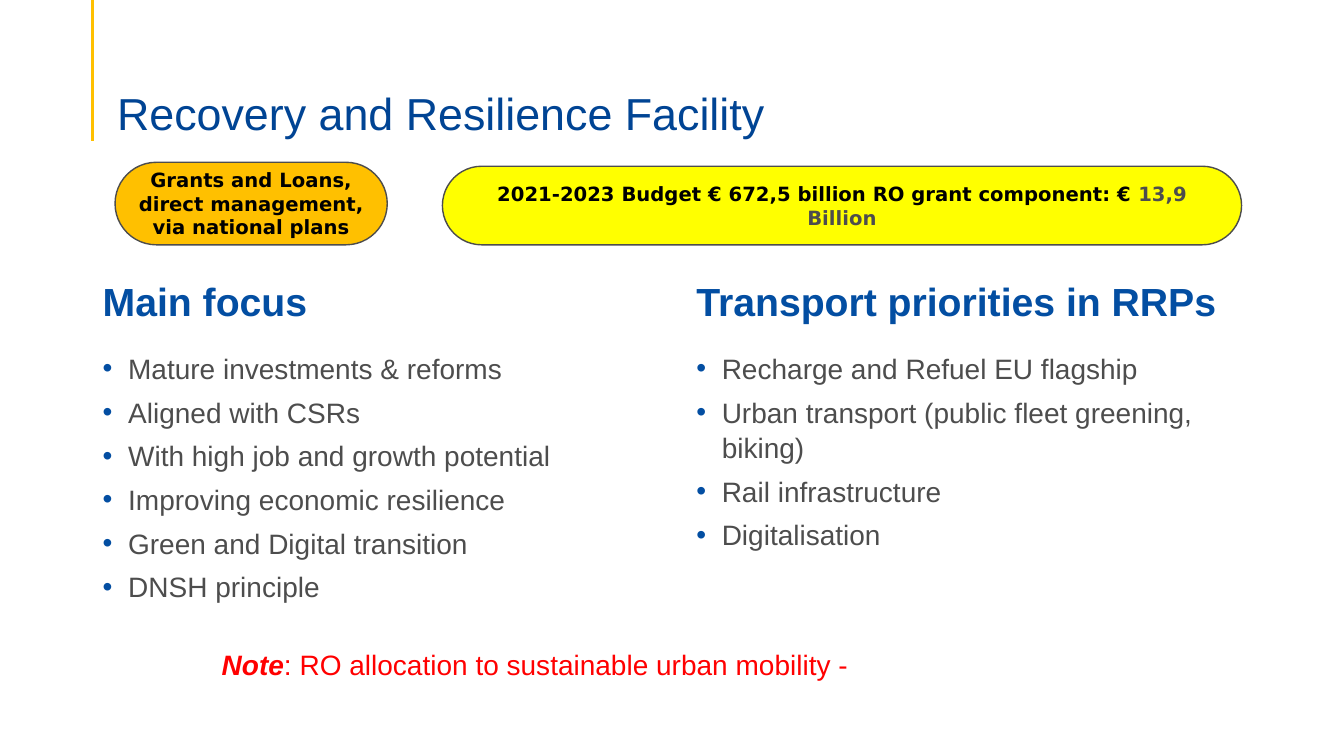
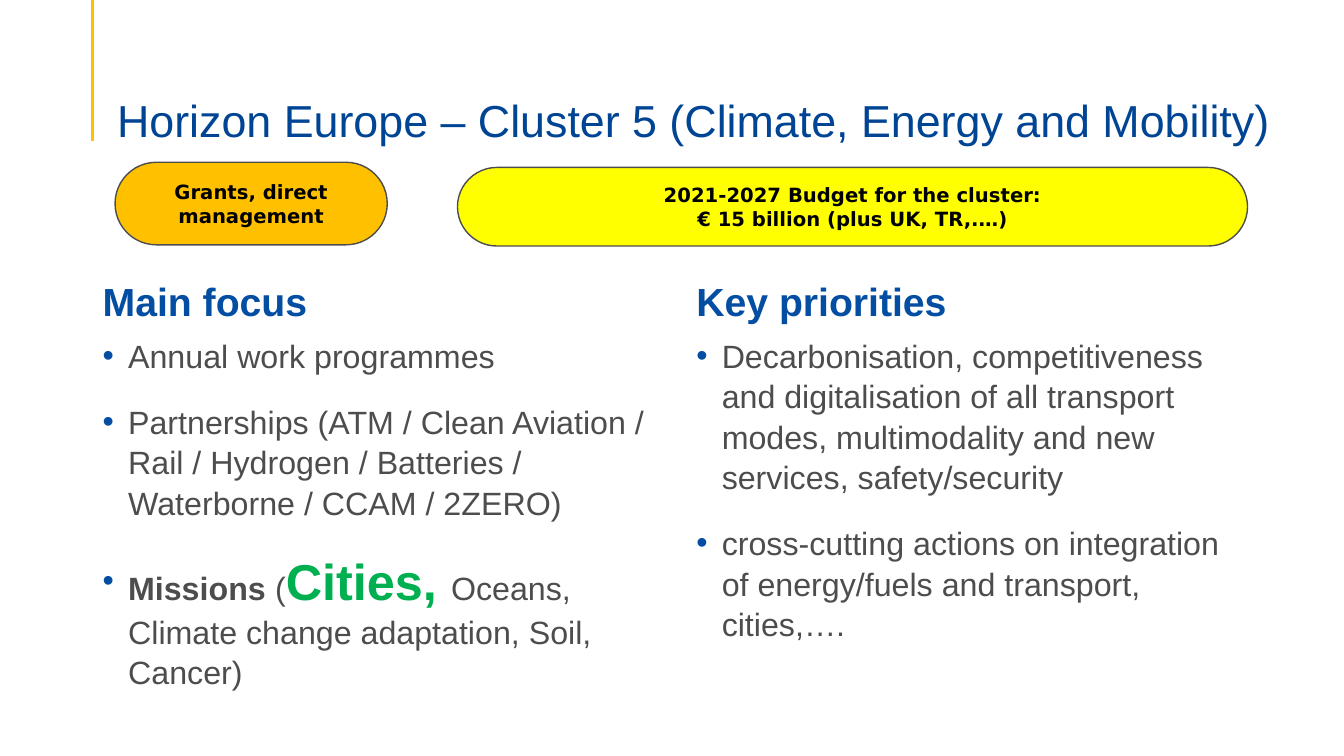
from lxml.etree import SubElement
from pptx import Presentation
from pptx.dml.color import RGBColor
from pptx.enum.shapes import MSO_CONNECTOR as Connector, MSO_SHAPE as Shape
from pptx.enum.text import MSO_ANCHOR as Anchor, PP_ALIGN as Align
from pptx.oxml.ns import qn
from pptx.util import Cm, Pt

COLORS = {
    "title": "004494", "heading": "034EA2", "body": "4D4D4D", "black": "000000",
    "white": "FFFFFF", "amber": "FFC000", "yellow": "FFFF00",
    "red": "FF0000", "green": "00B050",
}
LEFT, RIGHT = 2.34, 17.3
COLUMN_WIDTH = 14.4


def rgb(name):
    return RGBColor.from_string(COLORS[name])


class Deck:
    """Holds the shared style and the slide being filled."""

    def __init__(self):
        self.presentation = Presentation()
        self.presentation.slide_width = Cm(33.87)
        self.presentation.slide_height = Cm(19.05)
        self.slide = None

    def new_slide(self, title, top):
        layout = self.presentation.slide_layouts[6]
        self.slide = self.presentation.slides.add_slide(layout)
        rule = self.slide.shapes.add_connector(
            Connector.STRAIGHT, Cm(LEFT), Cm(0), Cm(LEFT), Cm(3.56))
        rule.line.color.rgb = rgb("amber")
        rule.line.width = Pt(2.25)
        SubElement(rule._element.spPr, qn("a:effectLst"))
        frame = self.text_box(2.7, top, 29.62, 2.18, Anchor.BOTTOM)
        frame.margin_bottom = 0
        paragraph = frame.paragraphs[0]
        paragraph.line_spacing = 0.9
        self.add_runs(paragraph, [title], size=32, color="title")

    def text_box(self, left, top, width, height, anchor=Anchor.TOP):
        box = self.slide.shapes.add_textbox(Cm(left), Cm(top), Cm(width), Cm(height))
        frame = box.text_frame
        frame.word_wrap = True
        frame.vertical_anchor = anchor
        return frame

    def add_runs(self, paragraph, runs, **base):
        """Add runs given as text, or as (text, style changes)."""
        for item in runs:
            text, changes = (item, {}) if isinstance(item, str) else item
            style = {"font": "Arial", "bold": False, "italic": False, **base, **changes}
            run = paragraph.add_run()
            run.text = text
            run.font.name = style["font"]
            run.font.size = Pt(style["size"])
            run.font.bold = style["bold"]
            run.font.italic = style["italic"]
            run.font.color.rgb = rgb(style["color"])

    def paragraphs(self, frame, count):
        return [frame.paragraphs[0]] + [frame.add_paragraph() for _ in range(count - 1)]

    def heading(self, left, text):
        frame = self.text_box(left, 6.02, COLUMN_WIDTH, 2.29, Anchor.BOTTOM)
        self.add_runs(frame.paragraphs[0], [text], size=28, color="heading", bold=True)

    def bullets(self, left, top, height, items, size, gap):
        frame = self.text_box(left, top, COLUMN_WIDTH, height)
        for paragraph, runs in zip(self.paragraphs(frame, len(items)), items):
            paragraph.line_spacing = 1.05
            paragraph.space_after = Pt(gap)
            properties = paragraph._p.get_or_add_pPr()
            properties.set("marL", str(Cm(0.64)))
            properties.set("indent", str(-Cm(0.64)))
            color = SubElement(properties, qn("a:buClr"))
            SubElement(color, qn("a:srgbClr"), val=COLORS["heading"])
            SubElement(properties, qn("a:buFont"), typeface="Arial")
            SubElement(properties, qn("a:buChar"), char="•")
            self.add_runs(paragraph, runs, size=size, color="body")

    def panel(self, kind, place, fill, line, lines, **style):
        """Add a filled shape with centred lines of text."""
        shape = self.slide.shapes.add_shape(kind, *map(Cm, place))
        shape.shadow.inherit = False
        shape.fill.solid()
        shape.fill.fore_color.rgb = rgb(fill)
        shape.line.color.rgb = rgb(line)
        shape.line.width = Pt(1)
        frame = shape.text_frame
        frame.word_wrap = True
        frame.vertical_anchor = Anchor.MIDDLE
        for paragraph, runs in zip(self.paragraphs(frame, len(lines)), lines):
            paragraph.alignment = Align.CENTER
            self.add_runs(paragraph, runs, **style)
        return shape

    def pill(self, place, fill, lines):
        shape = self.panel(Shape.ROUNDED_RECTANGLE, place, fill, "body", lines,
                           font="DejaVu Sans", size=14, color="black", bold=True)
        shape.adjustments[0] = 0.5

    def funding_type(self, text):
        self.pill((2.9, 4.09, 6.86, 2.08), "amber", [[text]])

    def budget(self, left, top, width, lines):
        self.pill((left, top, width, 1.98), "yellow", lines)

    def note(self, runs):
        self.panel(Shape.RECTANGLE, (1.32, 15.52, 24.33, 2.44), "white", "white", [runs],
                   size=20, color="red")


def recovery_slide(deck):
    deck.new_slide("Recovery and Resilience Facility", 1.35)
    deck.funding_type("Grants and Loans, direct management, via national plans")
    deck.budget(11.15, 4.19, 20.14, [[
        "2021-2023 Budget € 672,5 billion RO grant component: € ",
        ("13,9 Billion", {"color": "body"})]])
    columns = [
        (LEFT, "Main focus", [
            ["Mature investments & reforms"],
            ["Aligned with CSRs"],
            ["With high job and growth potential"],
            ["Improving economic resilience"],
            ["Green and Digital transition"],
            ["DNSH principle"]]),
        (RIGHT, "Transport priorities in RRPs", [
            ["Recharge and Refuel EU flagship"],
            ["Urban transport (public fleet greening, biking)"],
            ["Rail infrastructure"],
            ["Digitalisation"]]),
    ]
    for left, heading, items in columns:
        deck.heading(left, heading)
        deck.bullets(left, 8.69, 6.45, items, size=20, gap=6)
    deck.note([("Note", {"bold": True, "italic": True}),
               ": RO allocation to sustainable urban mobility -"])


def horizon_slide(deck):
    deck.new_slide("Horizon Europe – Cluster 5 (Climate, Energy and Mobility)", 1.52)
    deck.funding_type("Grants, direct management")
    deck.budget(11.53, 4.22, 19.91, [
        ["2021-2027 Budget for the cluster:"],
        ["€ 15 billion (plus UK, TR,.…)"]])
    columns = [
        (LEFT, "Main focus", [
            ["Annual work programmes"],
            ["Partnerships (ATM / Clean Aviation / Rail / Hydrogen / Batteries / "
             "Waterborne / CCAM / 2ZERO)"],
            [("Missions", {"bold": True}), " (",
             ("Cities, ", {"size": 36, "color": "green", "bold": True}),
             "Oceans, Climate change adaptation, Soil, Cancer)"]]),
        (RIGHT, "Key priorities", [
            ["Decarbonisation, competitiveness and digitalisation of all transport "
             "modes, multimodality and new services, safety/security"],
            ["cross-cutting actions on integration of energy/fuels and transport, "
             "cities,…."]]),
    ]
    for left, heading, items in columns:
        deck.heading(left, heading)
        deck.bullets(left, 8.3, 10.36, items, size=23, gap=18)


def main():
    deck = Deck()
    recovery_slide(deck)
    horizon_slide(deck)
    deck.presentation.save("out.pptx")


if __name__ == "__main__":
    main()
